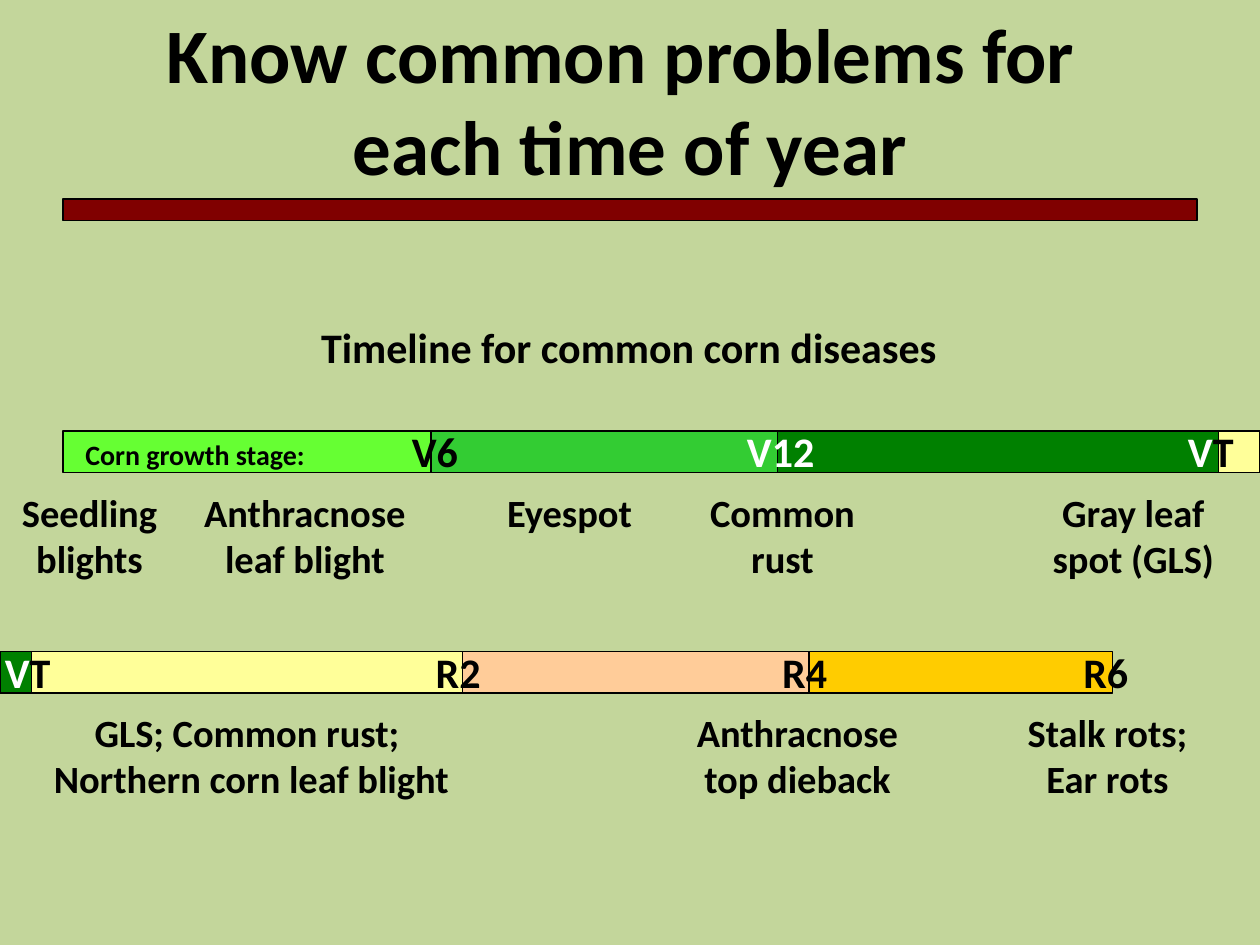
"""Build the corn disease timeline slide."""
from pptx import Presentation
from pptx.dml.color import RGBColor
from pptx.enum import shapes, text
from pptx.util import Inches, Pt

BLACK = RGBColor(0x00, 0x00, 0x00)
WHITE = RGBColor(0xFF, 0xFF, 0xFF)
SAGE = RGBColor(0xC3, 0xD6, 0x9B)
MAROON = RGBColor(0x80, 0x00, 0x00)
LIME = RGBColor(0x66, 0xFF, 0x33)
GREEN = RGBColor(0x33, 0xCC, 0x33)
DARK_GREEN = RGBColor(0x00, 0x80, 0x00)
YELLOW = RGBColor(0xFF, 0xFF, 0x99)
PEACH = RGBColor(0xFF, 0xCC, 0x99)
GOLD = RGBColor(0xFF, 0xCC, 0x00)

deck = Presentation()
deck.slide_width, deck.slide_height = Inches(10), Inches(7.5)
page = deck.slides.add_slide(deck.slide_layouts[6])
page.background.fill.solid()
page.background.fill.fore_color.rgb = SAGE


def add_bar(left, top, width, height, colour, line=0.75):
    bar = page.shapes.add_shape(
        shapes.MSO_SHAPE.RECTANGLE,
        Inches(left), Inches(top), Inches(width), Inches(height))
    bar.shadow.inherit = False
    bar.fill.solid()
    bar.fill.fore_color.rgb = colour
    bar.line.color.rgb = BLACK
    bar.line.width = Pt(line)


def add_text(lines, left, top, width, height, *, size=22, wrap=True,
             align=text.PP_ALIGN.CENTER):
    box = page.shapes.add_textbox(
        Inches(left), Inches(top), Inches(width), Inches(height))
    frame = box.text_frame
    frame.word_wrap = wrap
    frame.auto_size = text.MSO_AUTO_SIZE.SHAPE_TO_FIT_TEXT
    for index, spans in enumerate(lines):
        para = frame.add_paragraph() if index else frame.paragraphs[0]
        para.alignment = align
        for words, colour in spans:
            span = para.add_run()
            span.text = words
            span.font.name = "Calibri"
            span.font.size = Pt(size)
            span.font.bold = True
            span.font.color.rgb = colour


VT = [("V", WHITE), ("T", BLACK)]
timelines = [
    (3.42,
     [(9.33, 0.67, YELLOW), (0.5, 3.5, LIME), (3.42, 3.5, GREEN),
      (6.17, 3.5, DARK_GREEN)],
     [([("V6", BLACK)], 3.17, 0.57), ([("V12", WHITE)], 5.83, 0.74),
      (VT, 9.33, 0.56)],
     [(["Seedling blights"], 0, 1.42),
      (["Anthracnose leaf blight"], 1.42, 2),
      (["Eyespot"], 3.92, 1.2),
      (["Common rust"], 5.42, 1.58),
      (["Gray leaf spot (GLS)"], 8.08, 1.83)]),
    (5.17,
     [(0, 0.67, DARK_GREEN), (0.25, 3.5, YELLOW), (3.67, 3.5, PEACH),
      (6.42, 2.41, GOLD)],
     [(VT, -0.06, 0.56), ([("R2", BLACK)], 3.36, 0.56),
      ([("R4", BLACK)], 6.11, 0.56), ([("R6", BLACK)], 8.5, 0.56)],
     [(["GLS; Common rust; ", "Northern corn leaf blight"], -0.17, 4.33),
      (["Anthracnose top dieback"], 5.33, 2),
      (["Stalk rots;", "Ear rots"], 8, 1.58)]),
]

for top, bars, stages, diseases in timelines:
    for left, width, colour in bars:
        add_bar(left, top, width, 0.33, colour)
    for spans, left, width in stages:
        add_text([spans], left, top - 0.09, width, 0.5, size=24, wrap=False,
                 align=text.PP_ALIGN.LEFT)
    for lines, left, width in diseases:
        single = lines == ["Eyespot"]
        add_text([[(line, BLACK)] for line in lines], left, top + 0.41, width,
                 0.47 if single else 0.83, wrap=not single)

add_text([[("Timeline for common corn diseases", BLACK)]],
         2.45, 2.5, 5.13, 0.5, size=24, wrap=False, align=text.PP_ALIGN.LEFT)
add_text([[("Corn growth stage:", BLACK)]],
         0.58, 3.42, 2.17, 0.37, size=16, align=text.PP_ALIGN.LEFT)
add_text([[("Know common problems for ", BLACK)],
          [("each time of year", BLACK)]], 0, 0, 10, 1.58, size=44)
add_bar(0.5, 1.58, 9, 0.17, MAROON, line=1)

deck.save("out.pptx")
